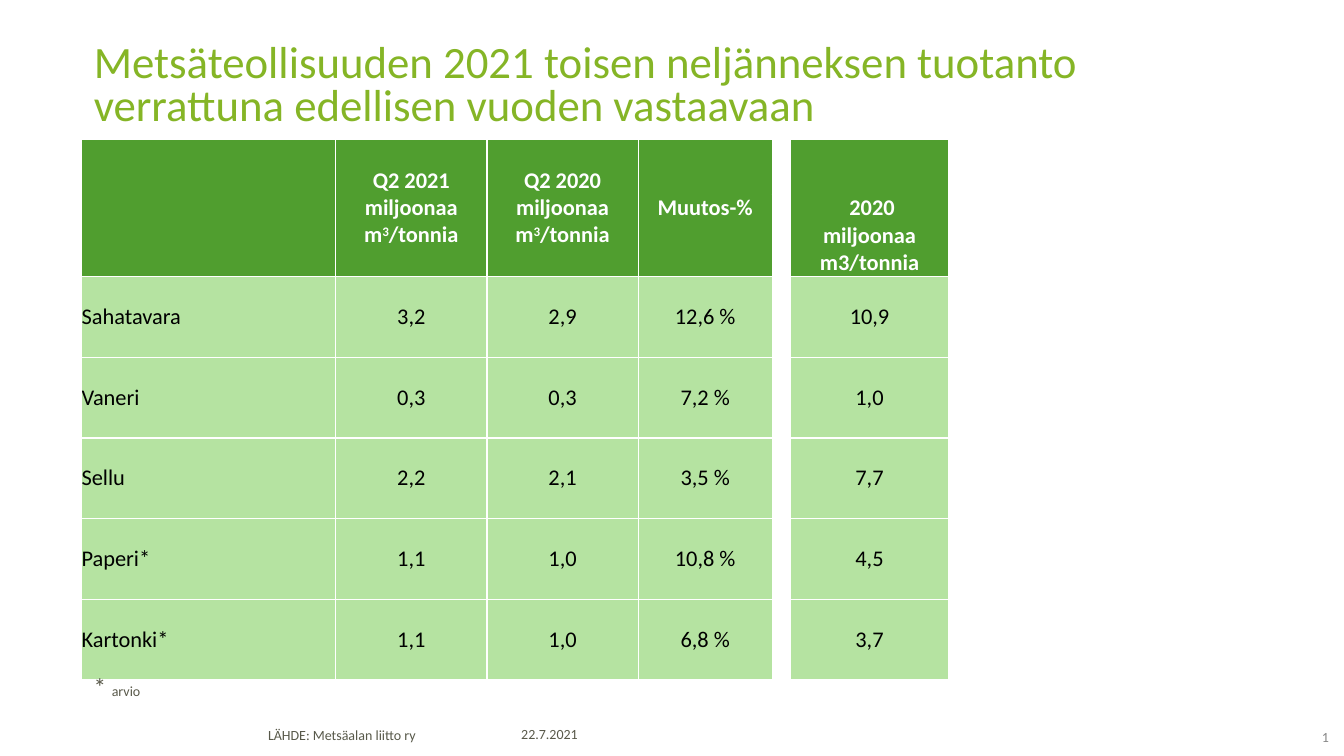
from lxml import etree
from pptx import Presentation
from pptx.dml.color import RGBColor
from pptx.enum.text import MSO_ANCHOR, PP_ALIGN
from pptx.oxml.ns import qn
from pptx.util import Inches, Pt

TOP, MIDDLE, BOTTOM = MSO_ANCHOR.TOP, MSO_ANCHOR.MIDDLE, MSO_ANCHOR.BOTTOM
LEFT, CENTER, RIGHT = PP_ALIGN.LEFT, PP_ALIGN.CENTER, PP_ALIGN.RIGHT

FONT = "Calibri"
COLORS = {
    "title": "85B526", "head": "509E2F", "body": "B5E3A1", "white": "FFFFFF",
    "black": "000000", "note": "59594A", "source": "58594A", "number": "878787",
}
TITLE = "Metsäteollisuuden 2021 toisen neljänneksen tuotanto verrattuna edellisen vuoden vastaavaan"
HEADS = [
    [],
    ["Q2 2021 miljoonaa m", "3", "/tonnia"],
    ["Q2 2020 miljoonaa m", "3", "/tonnia"],
    ["Muutos-%"],
    [],
    [" 2020", "\n", "miljoonaa", "\n", "m3/tonnia"],
]
ROWS = [
    ["Sahatavara", "3,2", "2,9", "12,6 %", "", "10,9"],
    ["Vaneri", "0,3", "0,3", "7,2 %", "", "1,0"],
    ["Sellu", "2,2", "2,1", "3,5 %", "", "7,7"],
    ["Paperi*", "1,1", "1,0", "10,8 %", "", "4,5"],
    ["Kartonki*", "1,1", "1,0", "6,8 %", "", "3,7"],
]
WIDTHS = [2.52, 1.5, 1.5, 1.33, 0.18, 1.57]
HEIGHTS = [0.55] * 2 + [0.8] * len(ROWS)
GAP = 4
LAST = len(WIDTHS) - 1
PAD = (0.1, 0.05, 0.1, 0.05)
FLAT = (0, 0, 0, 0.04)
NOTES = [
    ((2.56, 7.18, 7.18, 0.27), PAD, TOP, 0.85, [("LÄHDE: Metsäalan liitto ry", 10)], "source"),
    ((5.17, 7.15, 3, 0.31), FLAT, MIDDLE, 1, [("22.7.2021", 10)], "note"),
    ((0.83, 6.61, 1.03, 0.4), PAD, TOP, 1, [("* ", 18), ("arvio", 10)], "note"),
]


def paint(color):
    return RGBColor.from_string(COLORS[color])


def style(font, size, color, bold=False):
    font.name = FONT
    font.size = Pt(size)
    font.bold = bold
    font.color.rgb = paint(color)


def write(para, text, size, color, bold=False):
    run = para.add_run()
    run.text = text
    style(run.font, size, color, bold)
    return run


def inset(item, pad):
    item.margin_left, item.margin_top, item.margin_right, item.margin_bottom = map(Inches, pad)


def add_box(slide, place, pad, anchor):
    frame = slide.shapes.add_textbox(*map(Inches, place)).text_frame
    frame.word_wrap = True
    frame.vertical_anchor = anchor
    inset(frame, pad)
    return frame.paragraphs[0]


def dress(cell, color):
    props = cell._tc.get_or_add_tcPr()
    for side in ("lnL", "lnR", "lnT", "lnB"):
        line = etree.SubElement(props, qn("a:" + side), w=str(Pt(1)))
        fill = etree.SubElement(line, qn("a:solidFill"))
        etree.SubElement(fill, qn("a:srgbClr"), val=COLORS["white"])
    cell.fill.solid()
    cell.fill.fore_color.rgb = paint(color)
    inset(cell, (0, 0, 0, 0))


def fill_cell(cell, parts, color, bold, align, anchor):
    cell.vertical_anchor = anchor
    para = cell.text_frame.paragraphs[0]
    para.alignment = align
    for part in parts:
        if part == "\n":
            para.add_line_break()
            continue
        run = write(para, part, 16, color, bold)
        if part == "3":
            run.font._element.set("baseline", "30000")


def add_grid(slide):
    place = (0.81, 1.38, sum(WIDTHS), sum(HEIGHTS))
    grid = slide.shapes.add_table(len(HEIGHTS), len(WIDTHS), *map(Inches, place)).table
    for column, width in zip(grid.columns, WIDTHS):
        column.width = Inches(width)
    for row, height in zip(grid.rows, HEIGHTS):
        row.height = Inches(height)
    for r in range(len(HEIGHTS)):
        for c in range(len(WIDTHS)):
            dress(grid.cell(r, c), "white" if c == GAP else "head" if r < 2 else "body")
    for c, parts in enumerate(HEADS):
        if c != GAP:
            grid.cell(0, c).merge(grid.cell(1, c))
        if parts:
            anchor = BOTTOM if c == LAST else MIDDLE
            fill_cell(grid.cell(0, c), parts, "white", True, CENTER, anchor)
    for r, row in enumerate(ROWS, 2):
        for c, text in enumerate(row):
            if text:
                align = CENTER if c else LEFT
                fill_cell(grid.cell(r, c), [text], "black", False, align, MIDDLE)


def add_number(slide):
    para = add_box(slide, (12.65, 7.24, 0.53, 0.19), FLAT, MIDDLE)
    para.alignment = RIGHT
    run = write(para, "1", 10, "number")._r
    run.tag = qn("a:fld")
    run.set("id", "{B6F15528-21DE-4FAA-801E-634DDDAF4B2B}")
    run.set("type", "slidenum")


def main():
    deck = Presentation()
    deck.slide_width, deck.slide_height = Inches(13.33), Inches(7.5)
    slide = deck.slides.add_slide(deck.slide_layouts[5])
    title = slide.shapes.title
    title.left, title.top, title.width, title.height = map(Inches, (0.83, 0.39, 11.69, 0.98))
    frame = title.text_frame
    frame.word_wrap = True
    frame.vertical_anchor = TOP
    inset(frame, PAD)
    para = frame.paragraphs[0]
    para.alignment = LEFT
    para.line_spacing = 0.8
    write(para, TITLE, 32, "title")
    add_grid(slide)
    for place, pad, anchor, spacing, parts, color in NOTES:
        para = add_box(slide, place, pad, anchor)
        para.line_spacing = spacing
        for text, size in parts:
            write(para, text, size, color)
    add_number(slide)
    deck.save("out.pptx")


if __name__ == "__main__":
    main()
